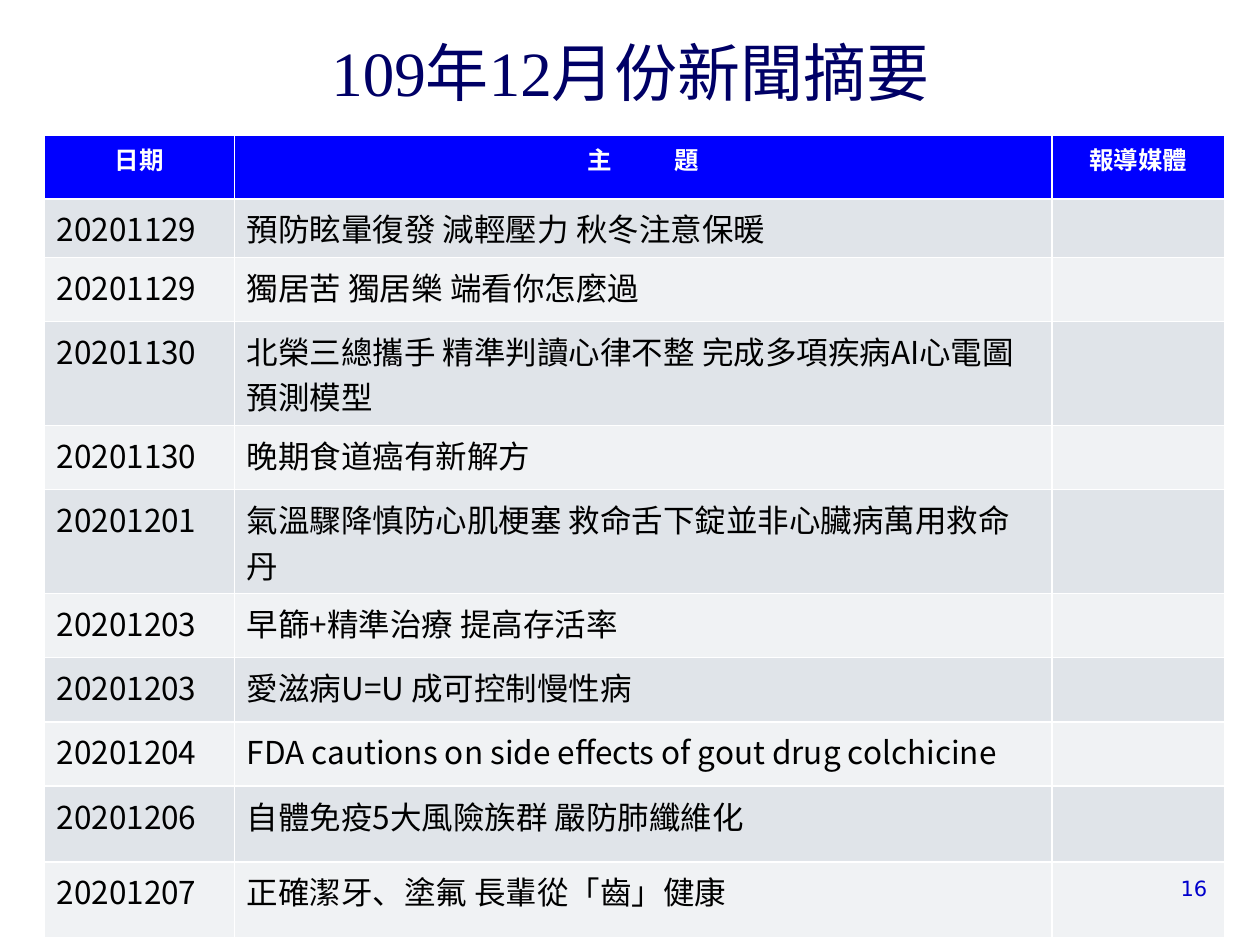
from lxml.etree import SubElement
from pptx import Presentation
from pptx.dml.color import RGBColor
from pptx.enum.text import MSO_ANCHOR as Anchor, MSO_AUTO_SIZE as AutoSize, PP_ALIGN as Align
from pptx.oxml.ns import qn
from pptx.util import Inches, Pt

CJK = "Noto Sans CJK SC"
COLUMN_WIDTHS = [1.51, 6.49, 1.37]
ROW_HEIGHTS = [0.51, 0.35] + [0.51] * 7 + [0.6] * 2
HEADINGS = ["日期", "主 題", "報導媒體"]
NEWS = [
    ("20201129", "預防眩暈復發 減輕壓力 秋冬注意保暖"),
    ("20201129", "獨居苦 獨居樂 端看你怎麼過"),
    ("20201130", "北榮三總攜手 精準判讀心律不整 完成多項疾病AI心電圖預測模型"),
    ("20201130", "晚期食道癌有新解方"),
    ("20201201", "氣溫驟降慎防心肌梗塞 救命舌下錠並非心臟病萬用救命丹"),
    ("20201203", "早篩+精準治療 提高存活率"),
    ("20201203", "愛滋病U=U 成可控制慢性病"),
    ("20201204", "FDA cautions on side effects of gout drug colchicine"),
    ("20201206", "自體免疫5大風險族群 嚴防肺纖維化"),
    ("20201207", "正確潔牙、塗氟 長輩從「齒」健康"),
]


def color(value):
    return RGBColor.from_string(value)


def format_text(paragraph, size, value, font=CJK, align=Align.LEFT, bold=False):
    paragraph.alignment = align
    for run in paragraph.runs:
        run.font.size = Pt(size)
        run.font.name = font
        run.font.bold = bold
        run.font.color.rgb = color(value)
        SubElement(run.font._element, qn("a:ea"), typeface=CJK)


def place(shape, left, top, width, height):
    shape.left, shape.top = Inches(left), Inches(top)
    shape.width, shape.height = Inches(width), Inches(height)


def set_title(slide, wording):
    title = slide.shapes.title
    place(title, 0.63, 0.34, 8.75, 0.58)
    frame = title.text_frame
    frame.text = wording
    frame.auto_size = AutoSize.NONE
    frame.vertical_anchor = Anchor.BOTTOM
    format_text(frame.paragraphs[0], 36, "000066", "Times New Roman", Align.CENTER)


def fill_heading(cell, wording):
    cell.fill.solid()
    cell.fill.fore_color.rgb = color("0000FF")
    heading = cell.text_frame.paragraphs[0]
    first, gap, last = wording.partition(" ")
    for part in filter(None, (first, gap, last)):
        heading.add_run().text = part
    format_text(heading, 14, "FFFFFF", align=Align.CENTER, bold=True)
    if gap:
        heading.runs[1].font._element.set("spc", "3200")


def fill_entry(cell, wording, band):
    cell.fill.solid()
    cell.fill.fore_color.rgb = color(band)
    if wording:
        cell.text_frame.text = wording
        format_text(cell.text_frame.paragraphs[0], 18, "000000")


def add_news_table(slide):
    table = slide.shapes.add_table(
        len(ROW_HEIGHTS), len(COLUMN_WIDTHS), Inches(0.35), Inches(1.07),
        Inches(sum(COLUMN_WIDTHS)), Inches(sum(ROW_HEIGHTS))).table
    for column, width in zip(table.columns, COLUMN_WIDTHS):
        column.width = Inches(width)
    for row, height in zip(table.rows, ROW_HEIGHTS):
        row.height = Inches(height)
    for column, heading in enumerate(HEADINGS):
        fill_heading(table.cell(0, column), heading)
    for row, (date, topic) in enumerate(NEWS, start=1):
        band = "E0E4E9" if row % 2 else "F0F2F4"
        for column, wording in enumerate((date, topic, "")):
            fill_entry(table.cell(row, column), wording, band)


def add_page_number(slide, number):
    box = slide.shapes.add_textbox(0, 0, 0, 0)
    place(box, 8.94, 6.9, 0.74, 0.3)
    frame = box.text_frame
    frame.word_wrap = True
    frame.text = number
    format_text(frame.paragraphs[0], 12, "0000CC", "DejaVu Sans", Align.RIGHT)


def main():
    deck = Presentation()
    deck.slide_width, deck.slide_height = Inches(10), Inches(7.5)
    slide = deck.slides.add_slide(deck.slide_layouts[5])
    set_title(slide, "109年12月份新聞摘要")
    add_news_table(slide)
    add_page_number(slide, "16")
    deck.save("out.pptx")


if __name__ == "__main__":
    main()
